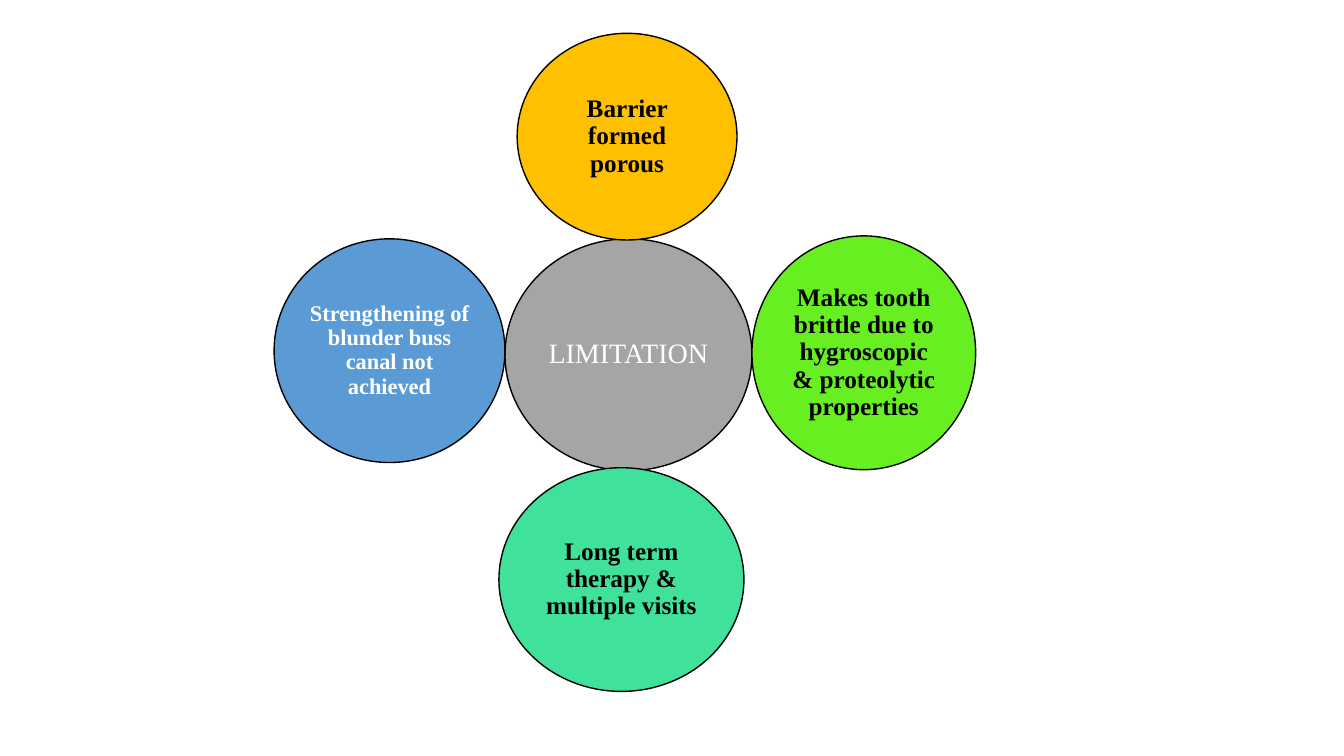
"""Build a slide of four limitations set around a central circle."""
from dataclasses import dataclass

from pptx import Presentation
from pptx import util as u
from pptx.dml.color import RGBColor
from pptx.enum import shapes, text
from pptx.slide import Slide


@dataclass(frozen=True)
class Theme:
    """Colours, font and type sizes of the slide."""
    font: str = "Times New Roman"
    black: str = "000000"
    white: str = "FFFFFF"
    grey: str = "A5A5A5"
    amber: str = "FFC000"
    lime: str = "67EF21"
    mint: str = "3FE19B"
    blue: str = "5B9BD5"
    hub_size: float = 20
    body_size: float = 18
    small_size: float = 16
    outline: float = 1
    inset: float = 1
    line_spacing: float = 0.9


@dataclass(frozen=True)
class Circle:
    """One labelled ellipse, with lengths in points."""
    label: str
    left: float
    top: float
    width: float
    height: float
    fill: str
    colour: str
    size: float
    bold: bool = True


THEME = Theme()
CIRCLES = (
    Circle("LIMITATION", 360.7, 170.6, 176.4, 165.6,
           THEME.grey, THEME.white, THEME.hub_size, bold=False),
    Circle("Barrier formed porous", 369.4, 23.8, 157, 147.6,
           THEME.amber, THEME.black, THEME.body_size),
    Circle("Makes tooth brittle due to hygroscopic & proteolytic properties",
           537.1, 168.5, 159.8, 167, THEME.lime, THEME.black, THEME.body_size),
    Circle("Long term therapy & multiple visits", 356.4, 334.1, 175, 159.8,
           THEME.mint, THEME.black, THEME.body_size),
    Circle("Strengthening of blunder buss canal not achieved",
           195.8, 170.6, 164.9, 159.8, THEME.blue, THEME.white, THEME.small_size),
)


def draw_circle(slide: Slide, circle: Circle) -> None:
    """Draw one ellipse with its centred label."""
    shape = slide.shapes.add_shape(
        shapes.MSO_SHAPE.OVAL, u.Pt(circle.left), u.Pt(circle.top),
        u.Pt(circle.width), u.Pt(circle.height))
    shape.shadow.inherit = False
    shape.fill.solid()
    shape.fill.fore_color.rgb = RGBColor.from_string(circle.fill)
    shape.line.color.rgb = RGBColor.from_string(THEME.black)
    shape.line.width = u.Pt(THEME.outline)

    frame = shape.text_frame
    frame.word_wrap = True
    frame.vertical_anchor = text.MSO_ANCHOR.MIDDLE
    frame.margin_left = frame.margin_right = u.Pt(THEME.inset)
    frame.margin_top = frame.margin_bottom = u.Pt(THEME.inset)
    frame.text = circle.label
    paragraph = frame.paragraphs[0]
    paragraph.alignment = text.PP_ALIGN.CENTER
    paragraph.line_spacing = THEME.line_spacing
    font = paragraph.runs[0].font
    font.name = THEME.font
    font.size = u.Pt(circle.size)
    font.bold = circle.bold
    font.color.rgb = RGBColor.from_string(circle.colour)


def main() -> None:
    """Create and save the presentation."""
    presentation = Presentation()
    presentation.slide_width = u.Pt(960)
    presentation.slide_height = u.Pt(540)
    slide = presentation.slides.add_slide(presentation.slide_layouts[6])
    for circle in CIRCLES:
        draw_circle(slide, circle)
    presentation.save("out.pptx")


if __name__ == "__main__":
    main()
